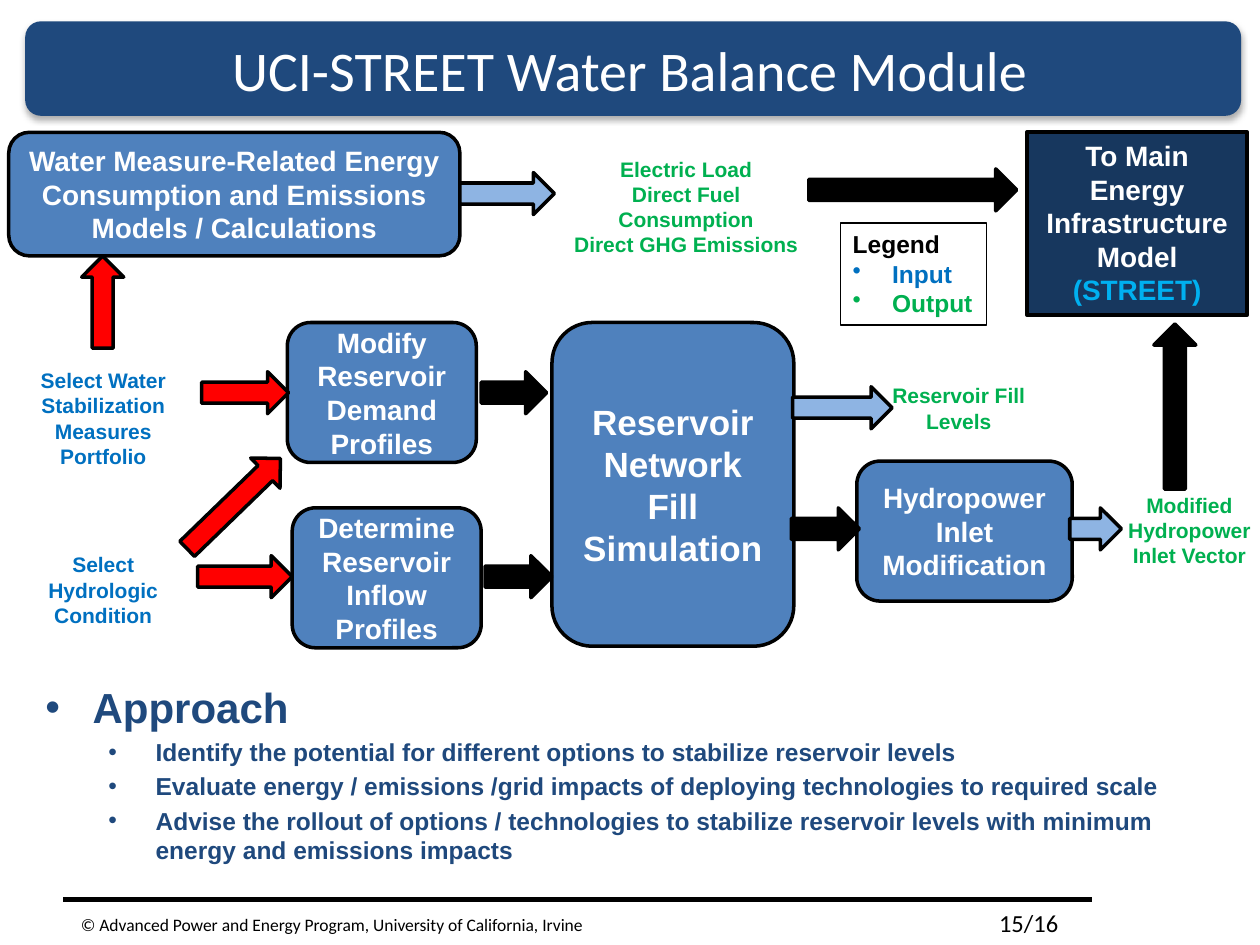
from lxml import etree
from pptx import Presentation
from pptx.dml.color import RGBColor
from pptx.enum.shapes import MSO_CONNECTOR, MSO_SHAPE
from pptx.enum.text import MSO_ANCHOR, MSO_AUTO_SIZE, PP_ALIGN
from pptx.oxml.ns import qn
from pptx.util import Pt

ROUND, RECT, ARROW = MSO_SHAPE.ROUNDED_RECTANGLE, MSO_SHAPE.RECTANGLE, MSO_SHAPE.RIGHT_ARROW
LEFT, CENTER = PP_ALIGN.LEFT, PP_ALIGN.CENTER
TOP, MIDDLE = MSO_ANCHOR.TOP, MSO_ANCHOR.MIDDLE
COLORS = {
    "navy": "1F497D", "dark": "17375E", "box": "4F81BD", "pale": "8EB4E3",
    "red": "FF0000", "black": "000000", "white": "FFFFFF",
    "input": "0070C0", "output": "00B050", "cyan": "00B0F0",
}


def rgb(name):
    return RGBColor.from_string(COLORS[name])


def write(tf, text, size=16, color="white", bold=True, font="Arial", align=CENTER,
          anchor=TOP, wrap=True, indent=0, hang=0, before=0, level=0, same_line=False):
    """Add text as a paragraph, or as a further run on the last one."""
    tf.word_wrap = wrap
    tf.vertical_anchor = anchor
    p = tf.paragraphs[-1]
    if p.runs and not same_line:
        p = tf.add_paragraph()
    p.alignment, p.level, p.space_before = align, level, Pt(before)
    if hang:
        pPr = p._p.get_or_add_pPr()
        pPr.set("marL", str(Pt(indent)))
        pPr.set("indent", str(-Pt(hang)))
        for old in pPr.findall(qn("a:buChar")):
            pPr.remove(old)
        etree.SubElement(pPr, qn("a:buChar"), char="•")
    r = p.add_run()
    r.text = text
    r.font.name, r.font.size, r.font.bold = font, Pt(size), bold
    r.font.color.rgb = rgb(color)


prs = Presentation()
prs.slide_width, prs.slide_height = Pt(720), Pt(540)
s = prs.slides.add_slide(prs.slide_layouts[1])
shapes = s.shapes

# Title banner, placed behind the title
banner = shapes.add_shape(ROUND, Pt(14.4), Pt(12.2), Pt(694.8), Pt(54))
banner.fill.solid()
banner.fill.fore_color.rgb = rgb("navy")
banner.line.fill.background()
banner.shadow.inherit = False
effects = banner._element.spPr.find(qn("a:effectLst"))
shadow = etree.SubElement(effects, qn("a:outerShdw"), blurRad=str(Pt(3.5)),
                          dist=str(Pt(2.2)), dir="5400000", rotWithShape="0")
black = etree.SubElement(shadow, qn("a:srgbClr"), val=COLORS["black"])
etree.SubElement(black, qn("a:alpha"), val="32000")
shapes._spTree.insert(2, banner._element)

title = shapes.title
title.left, title.top, title.width, title.height = Pt(0), Pt(8), Pt(720), Pt(62.6)
title.text_frame.auto_size = MSO_AUTO_SIZE.NONE
write(title.text_frame, "UCI-STREET Water Balance Module", size=32, bold=False,
      font="Calibri", anchor=MIDDLE)

# Process boxes
boxes = [
    (164.2, 184.3, 108, 80, 16, ["Modify Reservoir Demand", "Profiles"]),
    (167, 290.2, 108, 80, 16, ["Determine Reservoir Inflow Profiles"]),
    (315.4, 184.3, 138.2, 185, 20, ["Reservoir Network Fill Simulation"]),
    (5, 75.6, 257.8, 70.6, 16,
     ["Water Measure-Related Energy Consumption and Emissions Models / Calculations"]),
    (489.6, 263.5, 123.1, 80, 16, ["Hydropower Inlet Modification"]),
]
for x, y, w, h, size, lines in boxes:
    sp = shapes.add_shape(ROUND, Pt(x), Pt(y), Pt(w), Pt(h))
    sp.shadow.inherit = False
    sp.fill.solid()
    sp.fill.fore_color.rgb = rgb("box")
    sp.line.color.rgb = rgb("black")
    sp.line.width = Pt(2)
    for line in lines:
        write(sp.text_frame, line, size=size, anchor=MIDDLE)

# Block arrows: left, top, length, colour, rotation
arrows = [
    (96.5, 275.8, 74.2, "red", 315.9),
    (113, 317.5, 54, "red", 0),
    (115.2, 212.4, 49.7, "red", 0),
    (32.4, 160.6, 52.6, "red", 270),
    (277.2, 317.5, 38.2, "black", 0),
    (275, 212.4, 37.4, "black", 0),
    (452.2, 290.2, 38.9, "black", 0),
    (462.2, 96.5, 118.8, "black", 0),
    (624.2, 220.3, 94.3, "black", 270),
    (452.9, 221, 56.9, "pale", 0),
    (262.8, 98.6, 54, "pale", 0),
    (611.3, 290.2, 29.5, "pale", 0),
]
for x, y, w, color, rotation in arrows:
    sp = shapes.add_shape(ARROW, Pt(x), Pt(y), Pt(w), Pt(24))
    sp.rotation = rotation
    sp.shadow.inherit = False
    sp.fill.solid()
    sp.fill.fore_color.rgb = rgb(color)
    sp.line.color.rgb = rgb("black")
    sp.line.width = Pt(2)

# Input and output labels
labels = [
    (3.6, 206.6, 110.9, 65.5, "input", ["Select Water Stabilization Measures Portfolio"]),
    (5, 311.8, 108, 51, "input", ["Select Hydrologic Condition"]),
    (493.9, 215.3, 108, 36, "output", ["Reservoir Fill Levels"]),
    (315.4, 85.7, 153.4, 65.5, "output",
     ["Electric Load", "Direct Fuel Consumption", "Direct GHG Emissions"]),
    (632.9, 277.9, 93.6, 51, "output", ["Modified Hydropower Inlet Vector"]),
]
for x, y, w, h, color, lines in labels:
    sp = shapes.add_textbox(Pt(x), Pt(y), Pt(w), Pt(h))
    for line in lines:
        write(sp.text_frame, line, size=12, color=color)

# Legend
legend = shapes.add_shape(RECT, Pt(480.2), Pt(127.4), Pt(83.5), Pt(58.3))
legend.shadow.inherit = False
legend.fill.background()
legend.line.color.rgb = rgb("black")
legend.line.width = Pt(0.75)
write(legend.text_frame, "Legend", size=14, color="black", align=LEFT, wrap=False)
for text, color in [("Input", "input"), ("Output", "output")]:
    write(legend.text_frame, text, size=14, color=color, align=LEFT, wrap=False,
          indent=22.5, hang=22.5)

# Link to the main model
model = shapes.add_shape(RECT, Pt(586.8), Pt(75.6), Pt(126), Pt(104.4))
model.shadow.inherit = False
model.fill.solid()
model.fill.fore_color.rgb = rgb("dark")
model.line.color.rgb = rgb("black")
model.line.width = Pt(2.25)
write(model.text_frame, "To Main Energy Infrastructure Model ")
write(model.text_frame, "(STREET)", color="cyan", same_line=True)

# Approach list
body = s.placeholders[1]
body.left, body.top, body.width, body.height = Pt(18.7), Pt(386), Pt(653), Pt(132)
tf = body.text_frame
tf.auto_size = MSO_AUTO_SIZE.NONE
write(tf, "Approach", size=24, color="navy", align=LEFT, indent=27, hang=27)
for text in [
    "Identify the potential for different options to stabilize reservoir levels",
    "Evaluate energy / emissions /grid impacts of deploying technologies to required scale",
    "Advise the rollout of options / technologies to stabilize reservoir levels"
    " with minimum energy and emissions impacts",
]:
    write(tf, text, size=14, color="navy", align=LEFT, level=1, indent=63, hang=27, before=2.8)

# Footer
rule = shapes.add_connector(MSO_CONNECTOR.STRAIGHT, Pt(36), Pt(514), Pt(624), Pt(514))
rule.line.color.rgb = rgb("black")
rule.line.width = Pt(3)
etree.SubElement(rule._element.spPr, qn("a:effectLst"))
for x, y, w, size, text in [
    (39.2, 519, 432, 10, "© Advanced Power and Energy Program, University of California, Irvine"),
    (563.8, 515.5, 60, 14, "15/16"),
]:
    sp = shapes.add_textbox(Pt(x), Pt(y), Pt(w), Pt(24))
    write(sp.text_frame, text, size=size, color="black", bold=False, font="Calibri", align=LEFT)

prs.save("out.pptx")
